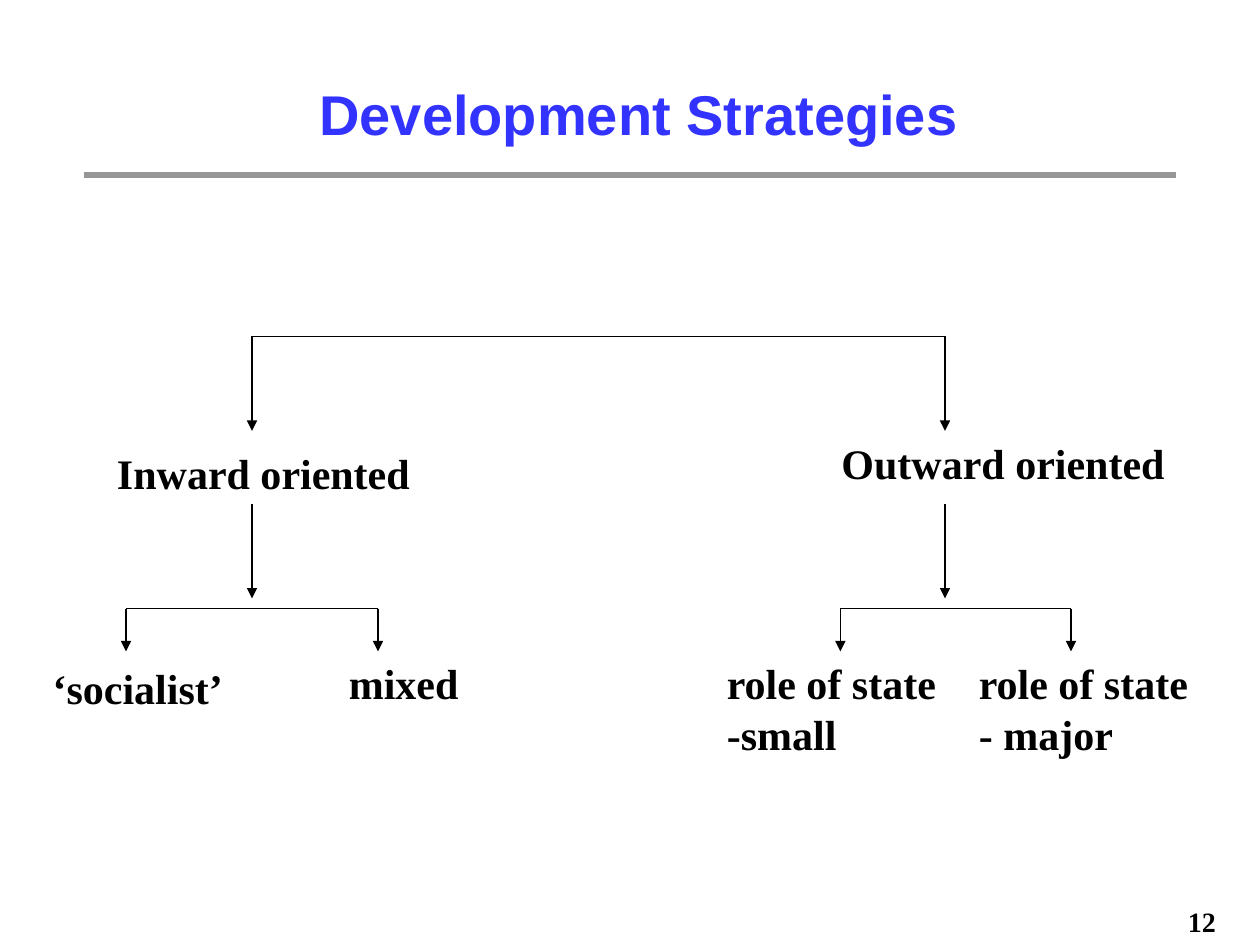
from lxml.etree import SubElement
from pptx import Presentation
from pptx.dml.color import RGBColor
from pptx.enum.shapes import MSO_CONNECTOR
from pptx.enum.text import MSO_ANCHOR, MSO_AUTO_SIZE, PP_ALIGN
from pptx.oxml.ns import qn
from pptx.util import Inches, Pt

COLORS = {"title": "3333FF", "text": "000000", "rule": "969696"}
TITLE = {"name": "Arial", "size": Pt(32), "bold": True}
LABEL = {"name": "Times New Roman", "size": Pt(24), "bold": True}
NUMBER = {**LABEL, "size": Pt(16)}


def set_font(font, style, color):
    for key, value in style.items():
        setattr(font, key, value)
    font.color.rgb = RGBColor.from_string(COLORS[color])


def add_title(s, text):
    sp = s.shapes.title
    sp.left, sp.top, sp.width, sp.height = map(Inches, (0.81, 0.62, 8.52, 0.56))
    tf = sp.text_frame
    tf.vertical_anchor = MSO_ANCHOR.MIDDLE
    p = tf.paragraphs[0]
    p.alignment = PP_ALIGN.CENTER
    r = p.add_run()
    r.text = text
    set_font(r.font, TITLE, "title")


def add_text(s, x, y, w, h, lines, style=LABEL):
    sp = s.shapes.add_textbox(*map(Inches, (x, y, w, h)))
    tf = sp.text_frame
    tf.word_wrap = False
    tf.auto_size = MSO_AUTO_SIZE.SHAPE_TO_FIT_TEXT
    for i, line in enumerate(lines):
        p = tf.add_paragraph() if i else tf.paragraphs[0]
        r = p.add_run()
        r.text = line
        set_font(r.font, style, "text")


def add_line(s, x1, y1, x2, y2, color="text", width=0.75, arrow=False):
    c = s.shapes.add_connector(MSO_CONNECTOR.STRAIGHT, *map(Inches, (x1, y1, x2, y2)))
    c.line.color.rgb = RGBColor.from_string(COLORS[color])
    c.line.width = Pt(width)
    spPr = c._element.spPr
    if arrow:
        SubElement(spPr.find(qn("a:ln")), qn("a:tailEnd"), type="triangle")
    SubElement(spPr, qn("a:effectLst"))


def add_fork(s, left, right, top, bottom):
    """Horizontal bar with an arrow down from each end."""
    add_line(s, left, top, right, top)
    for x in (left, right):
        add_line(s, x, top, x, bottom, arrow=True)


def main():
    prs = Presentation()
    prs.slide_width, prs.slide_height = Inches(10), Inches(7.5)
    s = prs.slides.add_slide(prs.slide_layouts[5])

    # Header and page number
    add_line(s, 0.67, 1.39, 9.33, 1.39, "rule", 3)
    add_text(s, 9.33, 7.13, 0.46, 0.37, ["12"], NUMBER)
    add_title(s, "Development Strategies")

    # Tree branches
    inward, outward = 2, 7.5
    add_fork(s, inward, outward, 2.67, 3.42)
    for x, left, right in ((inward, 1, 3), (outward, 6.67, 8.5)):
        add_line(s, x, 4, x, 4.75, arrow=True)
        add_fork(s, left, right, 4.83, 5.17)

    # Tree labels
    for label in (
        (0.83, 3.5, 2.55, 0.51, ["Inward oriented"]),
        (6.58, 3.42, 2.79, 0.51, ["Outward oriented"]),
        (0.32, 5.21, 1.57, 0.51, ["‘socialist’"]),
        (2.67, 5.17, 1.08, 0.51, ["mixed"]),
        (5.67, 5.17, 1.88, 0.91, ["role of state", "-small"]),
        (7.67, 5.17, 1.88, 0.91, ["role of state", "- major"]),
    ):
        add_text(s, *label)

    prs.save("out.pptx")


if __name__ == "__main__":
    main()
